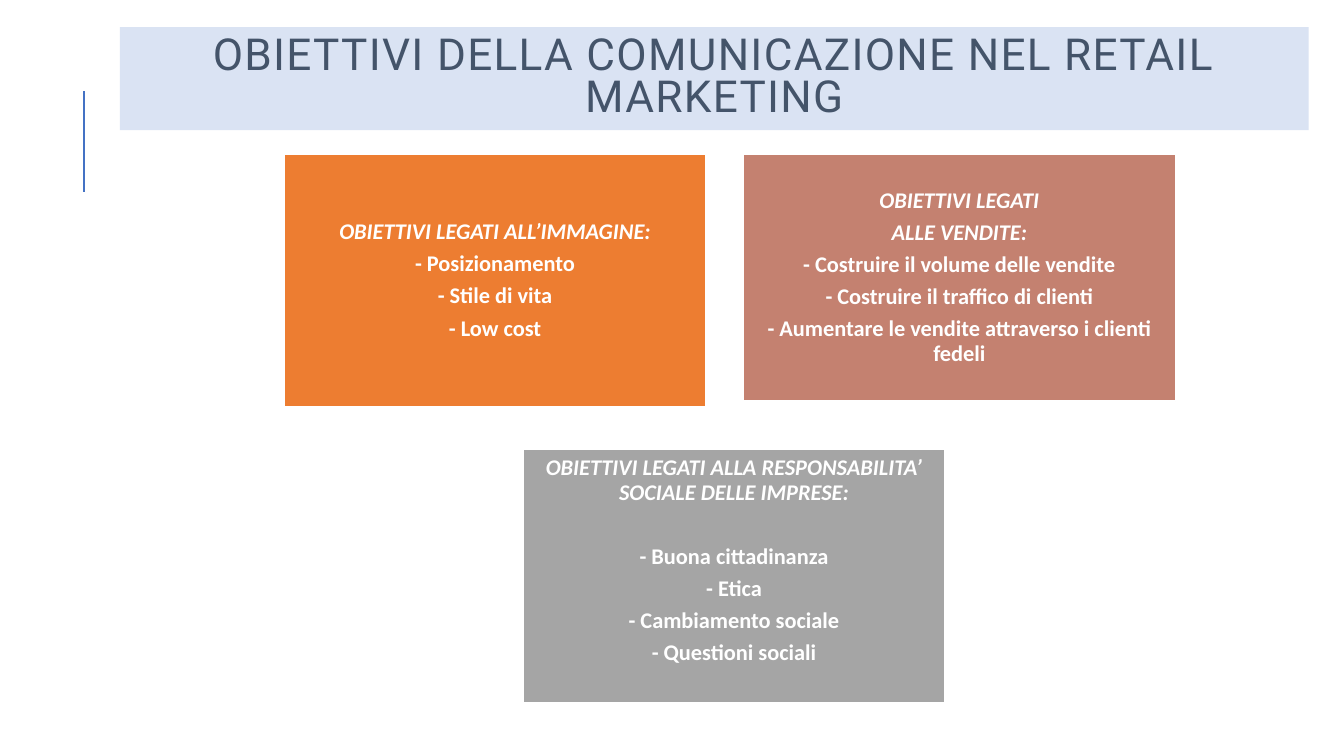
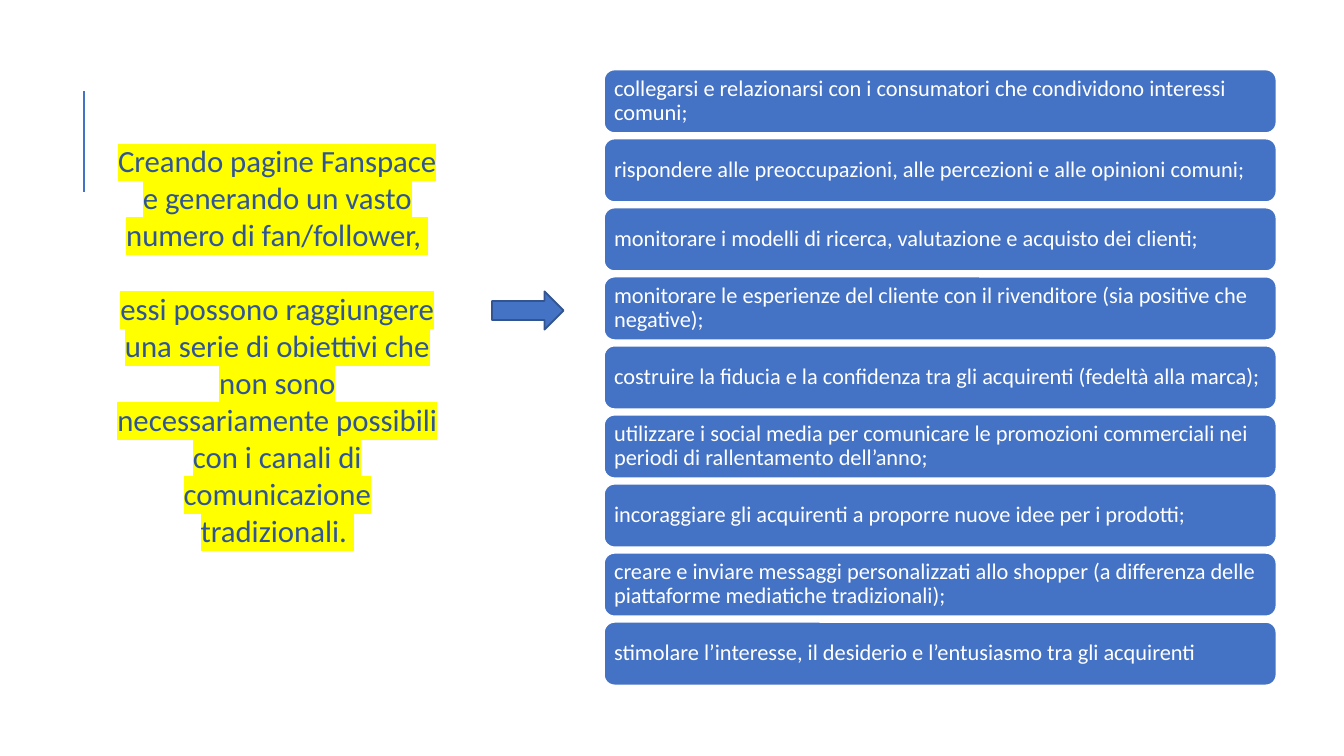
from lxml.etree import SubElement
from pptx import Presentation
from pptx.dml.color import RGBColor
from pptx.enum.shapes import MSO_CONNECTOR, MSO_SHAPE
from pptx.enum.text import MSO_ANCHOR, PP_ALIGN
from pptx.oxml.ns import qn
from pptx.util import Inches, Pt

BLUE, DARK_BLUE, PALE_BLUE = "4472C4", "325491", "DAE3F3"
ORANGE, BRICK, GREY = "ED7D31", "C48170", "A5A5A5"
WHITE, SLATE, NAVY, YELLOW = "FFFFFF", "44546A", "2F5597", "FFFF00"


def rgb(value):
    return RGBColor.from_string(value)


class Deck:
    body_font, title_font = "Calibri", "Roboto"
    body_size, gap = 16, 5.6
    inset = 0.07

    def __init__(self):
        self.prs = Presentation()
        self.prs.slide_width = Inches(13.33)
        self.prs.slide_height = Inches(7.5)
        self.s = None

    def slide(self):
        self.s = self.prs.slides.add_slide(self.prs.slide_layouts[6])
        # Accent line at the left of every slide
        line = self.s.shapes.add_connector(
            MSO_CONNECTOR.STRAIGHT, Inches(0.83), Inches(1.9), Inches(0.83), Inches(0.9))
        line.line.color.rgb = rgb(BLUE)
        line.line.width = Pt(1.5)
        SubElement(line._element.spPr, qn("a:effectLst"))

    def shape(self, kind, x, y, w, h, fill, line=None):
        sp = self.s.shapes.add_shape(kind, Inches(x), Inches(y), Inches(w), Inches(h))
        sp.shadow.inherit = False
        sp.fill.solid()
        sp.fill.fore_color.rgb = rgb(fill)
        if line:
            sp.line.color.rgb = rgb(line)
            sp.line.width = Pt(1.25)
        else:
            sp.line.fill.background()
        return sp

    def paragraph(self, tf, text, size, color, font=None, align=PP_ALIGN.CENTER,
                  spacing=None, after=0, bold=False, italic=False):
        p = tf.paragraphs[0]
        if p.runs:
            p = tf.add_paragraph()
        p.alignment = align
        p.line_spacing = spacing
        p.space_after = Pt(after)
        r = p.add_run()
        r.text = text
        r.font.name = font or self.body_font
        r.font.size = Pt(size)
        r.font.bold = bold
        r.font.italic = italic
        r.font.color.rgb = rgb(color)
        return r

    def title(self, text):
        sp = self.shape(MSO_SHAPE.RECTANGLE, 1.19, 0.27, 11.79, 1.02, PALE_BLUE)
        tf = sp.text_frame
        tf.word_wrap = True
        tf.vertical_anchor = MSO_ANCHOR.MIDDLE
        r = self.paragraph(tf, text, 31.5, SLATE, self.title_font, spacing=0.8)
        r.font._element.set("spc", "100")

    def filled_box(self, kind, x, y, w, h, fill, anchor=MSO_ANCHOR.MIDDLE):
        tf = self.shape(kind, x, y, w, h, fill, WHITE).text_frame
        tf.word_wrap = True
        tf.vertical_anchor = anchor
        tf.margin_left = tf.margin_right = Inches(self.inset)
        tf.margin_top = tf.margin_bottom = Inches(self.inset)
        return tf

    def card(self, x, y, w, h, fill, heading, items, anchor=MSO_ANCHOR.MIDDLE,
             heading_gap=gap):
        tf = self.filled_box(MSO_SHAPE.RECTANGLE, x, y, w, h, fill, anchor)
        for text in heading:
            after = heading_gap if text == heading[-1] else self.gap
            self.paragraph(tf, text, self.body_size, WHITE, spacing=0.9,
                           after=after, bold=True, italic=True)
        for text in items:
            self.paragraph(tf, "- " + text, self.body_size, WHITE, spacing=0.9,
                           after=self.gap, bold=True)

    def bars(self, x, first_top, last_top, w, h, texts):
        step = (last_top - first_top) / (len(texts) - 1)
        for i, text in enumerate(texts):
            tf = self.filled_box(MSO_SHAPE.ROUNDED_RECTANGLE,
                                 x, first_top + i * step, w, h, BLUE)
            self.paragraph(tf, text, self.body_size, WHITE,
                           align=PP_ALIGN.LEFT, spacing=0.9)

    def highlighted_text(self, x, y, w, h, texts, gap):
        sp = self.s.shapes.add_textbox(Inches(x), Inches(y), Inches(w), Inches(h))
        tf = sp.text_frame
        tf.word_wrap = True
        for text in texts:
            after = 0 if text == texts[-1] else gap
            r = self.paragraph(tf, text, 22, NAVY, after=after)
            rPr = r.font._element
            mark = SubElement(rPr, qn("a:highlight"))
            SubElement(mark, qn("a:srgbClr")).set("val", YELLOW)
            rPr.find(qn("a:solidFill")).addnext(mark)


def main():
    deck = Deck()

    # Slide 1: three groups of goals
    deck.slide()
    deck.title("OBIETTIVI DELLA COMUNICAZIONE NEL RETAIL MARKETING")
    deck.card(2.82, 1.53, 4.18, 2.51, ORANGE,
              ["OBIETTIVI LEGATI ALL’IMMAGINE:"],
              ["Posizionamento", "Stile di vita", "Low cost"])
    deck.card(7.37, 1.53, 4.29, 2.45, BRICK,
              ["OBIETTIVI LEGATI", "ALLE VENDITE:"],
              ["Costruire il volume delle vendite",
               "Costruire il traffico di clienti",
               "Aumentare le vendite attraverso i clienti fedeli"])
    deck.card(5.19, 4.46, 4.18, 2.51, GREY,
              ["OBIETTIVI LEGATI ALLA RESPONSABILITA’ SOCIALE DELLE IMPRESE:"],
              ["Buona cittadinanza", "Etica", "Cambiamento sociale",
               "Questioni sociali"],
              anchor=MSO_ANCHOR.TOP, heading_gap=28.6)

    # Slide 2: social pages and the goals they serve
    deck.slide()
    deck.highlighted_text(1.03, 1.36, 3.44, 4.17, [
        "Creando pagine Fanspace e generando un vasto numero di fan/follower, ",
        "essi possono raggiungere una serie di obiettivi che non sono "
        "necessariamente possibili con i canali di comunicazione tradizionali. ",
    ], gap=26.4)
    deck.shape(MSO_SHAPE.RIGHT_ARROW, 4.88, 2.89, 0.71, 0.38, BLUE, DARK_BLUE)
    deck.bars(5.99, 0.69, 6.17, 6.67, 0.63, [
        "collegarsi e relazionarsi con i consumatori che condividono interessi comuni;",
        "rispondere alle preoccupazioni, alle percezioni e alle opinioni comuni;",
        "monitorare i modelli di ricerca, valutazione e acquisto dei clienti;",
        "monitorare le esperienze del cliente con il rivenditore "
        "(sia positive che negative);",
        "costruire la fiducia e la confidenza tra gli acquirenti (fedeltà alla marca);",
        "utilizzare i social media per comunicare le promozioni commerciali "
        "nei periodi di rallentamento dell’anno;",
        "incoraggiare gli acquirenti a proporre nuove idee per i prodotti;",
        "creare e inviare messaggi personalizzati allo shopper "
        "(a differenza delle piattaforme mediatiche tradizionali);",
        "stimolare l’interesse, il desiderio e l’entusiasmo tra gli acquirenti",
    ])

    deck.prs.save("out.pptx")


if __name__ == "__main__":
    main()
